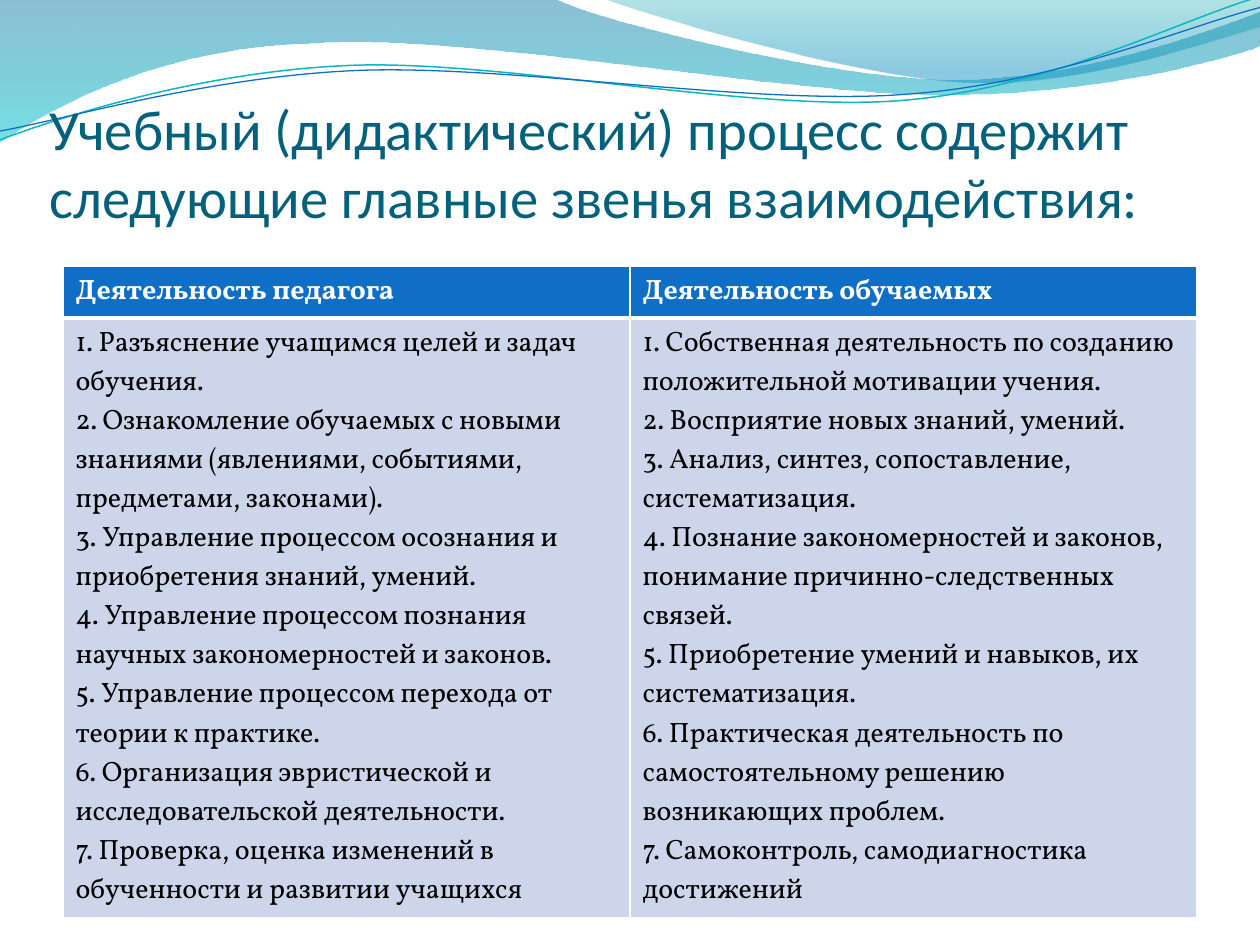
from lxml.etree import SubElement
from pptx import Presentation
from pptx.dml.color import RGBColor
from pptx.enum.text import MSO_ANCHOR
from pptx.oxml.ns import qn
from pptx.util import Pt

COLORS = {
    "blue": "0F6FC6", "teal": "0AB8BF", "title": "04617B",
    "band": "CCD5EA", "white": "FFFFFF", "black": "000000",
    "deep": "0074A1", "cyan": "00C6CF", "sea": "00A1A9", "sky": "008BBF",
}


def draw_curve(segments, closed):
    points = [(round(segment[i] * 100), round(segment[i + 1] * 100))
              for segment in segments for i in range(0, len(segment), 2)]
    outline = slide.shapes.build_freeform(*points[0], scale=Pt(0.72))
    outline.add_line_segments(points[1:], close=closed)
    curve = outline.convert_to_shape()
    curve.shadow.inherit = False
    lines = iter(list(curve._element.iter(qn("a:lnTo"))))
    for segment in segments[1:]:
        first = next(lines)
        if len(segment) == 6:
            first.tag = qn("a:cubicBezTo")
            for extra in (next(lines), next(lines)):
                first.append(extra[0])
                extra.getparent().remove(extra)
    return curve


def write_run(paragraph, text, font, size, color, bold=False):
    run = paragraph.add_run()
    run.text = text
    run.font.name = font
    run.font.size = Pt(size)
    run.font.bold = bold
    run.font.color.rgb = RGBColor.from_string(COLORS[color])


prs = Presentation()
prs.slide_width, prs.slide_height = Pt(720), Pt(540)
slide = prs.slides.add_slide(prs.slide_layouts[6])

waves = [
    ([(0, 0), (4.4, -0.01), (4.76, 0.17, 6.64, 0.63, 7.58, 0.63),
      (8.53, 0.63, 9.58, 0.26, 10, 0.09), (10.01, 0.36),
      (9.83, 0.44, 8.7, 0.76, 7.46, 0.75), (6.22, 0.75, 3.82, 0.28, 2.57, 0.34),
      (1.29, 0.36, 0.46, 0.83, -0.01, 1.13)],
     [(0, "deep", 45), (100, "cyan", 55)]),
    ([(4.79, -0.01), (5.09, 0.11, 6.82, 0.62, 7.69, 0.65),
      (8.56, 0.69, 9.61, 0.32, 10, 0.21), (10, 0)],
     [(0, "sea", 30), (80, "sky", 45)]),
]
for segments, stops in waves:
    wave = draw_curve(segments, True)
    wave.line.fill.background()
    wave.fill.gradient()
    gradient = wave.fill._xPr.find(qn("a:gradFill"))
    for child in list(gradient):
        gradient.remove(child)
    stop_list = SubElement(gradient, qn("a:gsLst"))
    for position, color, alpha in stops:
        stop = SubElement(stop_list, qn("a:gs"), pos=str(position * 1000))
        tint = SubElement(stop, qn("a:srgbClr"), val=COLORS[color])
        SubElement(tint, qn("a:alpha"), val=str(alpha * 1000))
    SubElement(gradient, qn("a:lin"), ang="5400000", scaled="0")

strands = [
    ([(0, 1.11), (0.48, 0.93, 1.58, 0.57, 2.77, 0.52),
      (3.95, 0.47, 5.93, 0.89, 7.13, 0.8), (8.33, 0.71, 9.38, 0.15, 9.98, -0.02)],
     "teal", 0.85),
    ([(0, 1.04), (0.47, 0.96, 1.64, 0.61, 2.83, 0.56),
      (4.03, 0.51, 5.97, 0.84, 7.17, 0.75), (8.36, 0.67, 9.41, 0.21, 10, 0.06)],
     "blue", 0.75),
]
for segments, color, width in strands:
    strand = draw_curve(segments, False)
    strand.fill.background()
    strand.line.color.rgb = RGBColor.from_string(COLORS[color])
    strand.line.width = Pt(width)

title = slide.shapes.add_textbox(Pt(28.3), Pt(48.6), Pt(648), Pt(83)).text_frame
title.word_wrap = True
title.vertical_anchor = MSO_ANCHOR.BOTTOM
title.margin_left = title.margin_right = title.margin_bottom = 0
write_run(title.paragraphs[0],
          "Учебный (дидактический) процесс содержит следующие главные звенья взаимодействия:",
          "Calibri", 32.4, "title")

activities = {
    "Деятельность педагога": [
        "1. Разъяснение учащимся целей и задач обучения.",
        "2. Ознакомление обучаемых с новыми знаниями (явлениями, событиями, предметами, законами).",
        "3. Управление процессом осознания и приобретения знаний, умений.",
        "4. Управление процессом познания научных закономерностей и законов.",
        "5. Управление процессом перехода от теории к практике.",
        "6. Организация эвристической и исследовательской деятельности.",
        "7. Проверка, оценка изменений в обученности и развитии учащихся",
    ],
    "Деятельность обучаемых": [
        "1. Собственная деятельность по созданию положительной мотивации учения.",
        "2. Восприятие новых знаний, умений.",
        "3. Анализ, синтез, сопоставление, систематизация.",
        "4. Познание закономерностей и законов, понимание причинно-следственных связей.",
        "5. Приобретение умений и навыков, их систематизация.",
        "6. Практическая деятельность по самостоятельному решению возникающих проблем.",
        "7. Самоконтроль, самодиагностика достижений",
    ],
}
table = slide.shapes.add_table(2, 2, Pt(36), Pt(152.3), Pt(648), Pt(372)).table
table.rows[0].height, table.rows[1].height = Pt(29.5), Pt(342.5)
for column, (heading, duties) in enumerate(activities.items()):
    rows = [([heading], "blue", "white", True, {"lnB": 3}),
            (duties, "band", "black", False, {"lnT": 3})]
    for row, (texts, fill, color, bold, thick) in enumerate(rows):
        cell = table.cell(row, column)
        for index, text in enumerate(texts):
            frame = cell.text_frame
            paragraph = frame.add_paragraph() if index else frame.paragraphs[0]
            write_run(paragraph, text, "Vollkorn", 16, color, bold)
        properties = cell._tc.get_or_add_tcPr()
        for side in ("lnL", "lnR", "lnT", "lnB"):
            border = SubElement(properties, qn("a:" + side), w=str(Pt(thick.get(side, 1))))
            paint = SubElement(border, qn("a:solidFill"))
            SubElement(paint, qn("a:srgbClr"), val=COLORS["white"])
        cell.fill.solid()
        cell.fill.fore_color.rgb = RGBColor.from_string(COLORS[fill])

prs.save("out.pptx")
